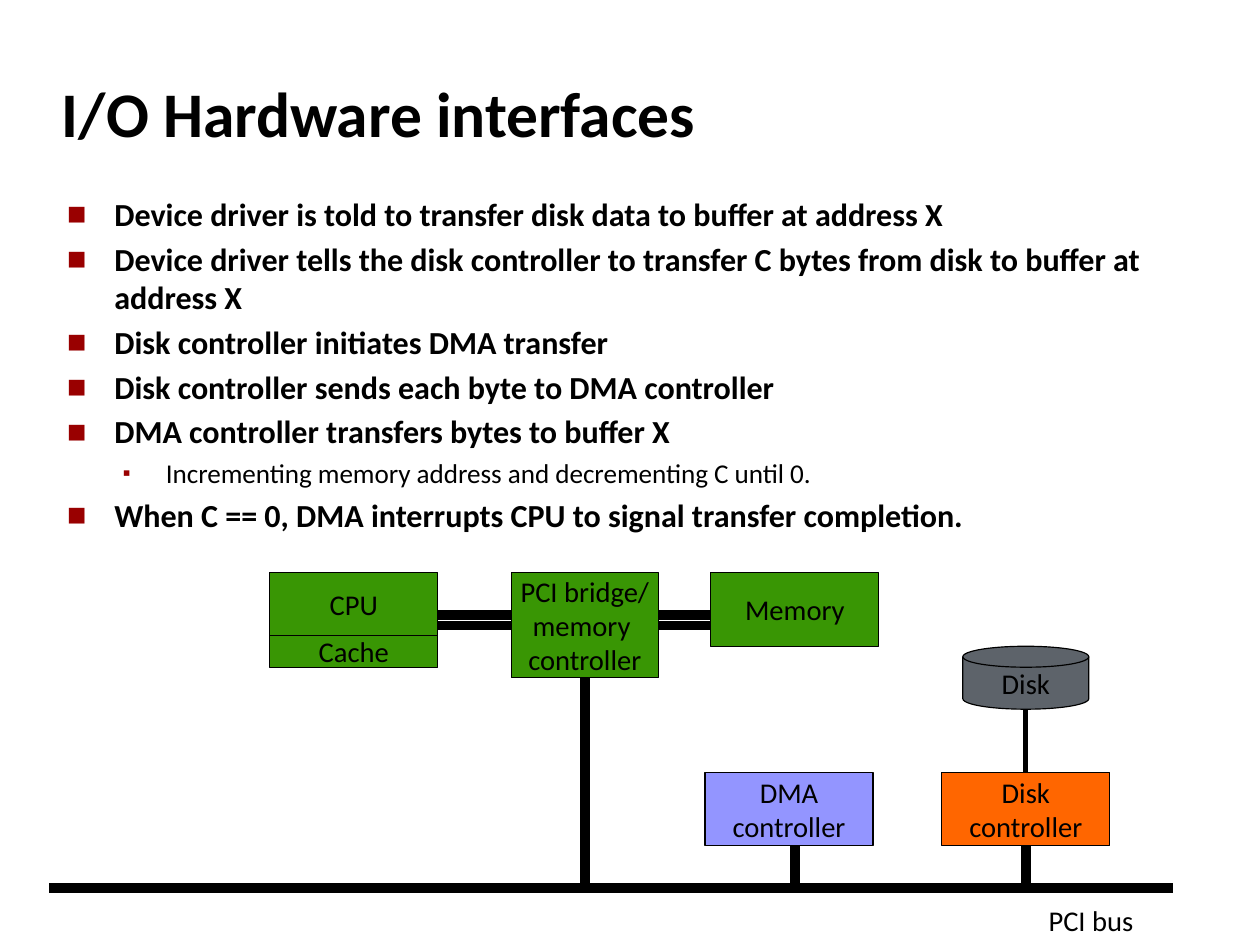
from dataclasses import dataclass

from lxml import etree
from pptx import Presentation
from pptx.dml.color import RGBColor
from pptx.enum.shapes import MSO_CONNECTOR, MSO_SHAPE
from pptx.enum.text import MSO_ANCHOR, PP_ALIGN
from pptx.oxml.ns import qn
from pptx.util import Inches, Mm, Pt

STRAIGHT = MSO_CONNECTOR.STRAIGHT
RECTANGLE, DISK = MSO_SHAPE.RECTANGLE, MSO_SHAPE.FLOWCHART_MAGNETIC_DISK
LEFT, CENTER = PP_ALIGN.LEFT, PP_ALIGN.CENTER
TOP, MIDDLE = MSO_ANCHOR.TOP, MSO_ANCHOR.MIDDLE
TOP_SIDE, BOTTOM_SIDE = 0, 2


@dataclass(frozen=True)
class Theme:
    """Colours, type and line sizes of the slide."""
    font: str = "Calibri"
    ink: str = "000000"
    bullet: str = "990000"
    core: str = "399604"
    dma: str = "3B3EFF"
    controller: str = "FF6600"
    disk: str = "5D636A"
    title_size: float = 40
    point_size: float = 20.2
    detail_size: float = 17.1
    label_size: float = 18
    outline: float = 0.75
    cable: float = 3
    bus: float = 6


class SlideBuilder:
    """Places styled elements on a 120 by 90 grid."""

    columns, rows = 120, 90

    def __init__(self, deck, theme):
        """Add a title-only slide to the deck."""
        self.theme = theme
        self.slide = deck.slides.add_slide(deck.slide_layouts[5])
        self.column = deck.slide_width / self.columns
        self.row = deck.slide_height / self.rows
        self.origin = (0, 0)

    def place(self, x, y):
        """Turn a grid point, counted from the origin, into lengths."""
        return (round((self.origin[0] + x) * self.column),
                round((self.origin[1] + y) * self.row))

    def area(self, x, y, width, height):
        """Turn a grid area into left, top, width and height."""
        return (*self.place(x, y), round(width * self.column), round(height * self.row))

    def style(self, para, size, bold=False, align=LEFT):
        """Format a paragraph and its runs."""
        para.alignment = align
        for span in para.runs:
            span.font.name = self.theme.font
            span.font.size = Pt(size)
            span.font.bold = bold
            span.font.color.rgb = RGBColor.from_string(self.theme.ink)

    def frame(self, box, anchor):
        """Set the anchor and insets of a wrapping text frame."""
        frame = box.text_frame
        frame.word_wrap = True
        frame.vertical_anchor = anchor
        frame.margin_left = frame.margin_right = Inches(0.11)
        frame.margin_top = frame.margin_bottom = Inches(0.06)
        return frame

    def title(self, text, *area):
        """Fill and move the title placeholder."""
        box = self.slide.shapes.title
        box.left, box.top, box.width, box.height = self.area(*area)
        frame = self.frame(box, MIDDLE)
        frame.text = text
        self.style(frame.paragraphs[0], self.theme.title_size, bold=True)

    def bullets(self, items, *area):
        """Add a bulleted list of (level, text) items."""
        frame = self.frame(self.slide.shapes.add_textbox(*self.area(*area)), TOP)
        frame.text = "\n".join(text for _, text in items)
        levels = ((self.theme.point_size, True, "■", 64, 4.5, 4.5),
                  (self.theme.detail_size, False, "▪", 80, 9.4, 4.1))
        for para, (level, _) in zip(frame.paragraphs, items):
            size, bold, mark, share, indent, hang = levels[level]
            para.level = level
            para.space_before = Pt(3.9)
            self.style(para, size, bold)
            props = para._p.get_or_add_pPr()
            props.set("marL", str(round(indent * self.column)))
            props.set("indent", str(round(-hang * self.column)))
            color = etree.SubElement(props, qn("a:buClr"))
            etree.SubElement(color, qn("a:srgbClr"), val=self.theme.bullet)
            etree.SubElement(props, qn("a:buSzPct"), val=str(share * 1000))
            etree.SubElement(props, qn("a:buFont"), typeface=self.theme.font)
            etree.SubElement(props, qn("a:buChar"), char=mark)

    def label(self, box, text):
        """Write centred text that does not wrap."""
        frame = box.text_frame
        frame.text = text
        frame.word_wrap = False
        frame.vertical_anchor = MIDDLE
        for para in frame.paragraphs:
            self.style(para, self.theme.label_size, align=CENTER)

    def caption(self, text, *area):
        """Add a free-standing label."""
        self.label(self.slide.shapes.add_textbox(*self.area(*area)), text)

    def unit(self, text, fill, *area, kind=RECTANGLE, alpha=None):
        """Add a labelled hardware unit."""
        box = self.slide.shapes.add_shape(kind, *self.area(*area))
        box.shadow.inherit = False
        box.fill.solid()
        box.fill.fore_color.rgb = RGBColor.from_string(fill)
        box.line.color.rgb = RGBColor.from_string(self.theme.ink)
        box.line.width = Pt(self.theme.outline)
        if alpha:
            color = box._element.spPr.find(qn("a:solidFill"))[0]
            etree.SubElement(color, qn("a:alpha"), val=str(alpha * 1000))
        self.label(box, text)
        return box

    def wire(self, start, end, width, source=None, target=None):
        """Draw a line, joined to (box, side) pairs where given."""
        line = self.slide.shapes.add_connector(
            STRAIGHT, *self.place(*start), *self.place(*end))
        line.line.color.rgb = RGBColor.from_string(self.theme.ink)
        line.line.width = Pt(width)
        etree.SubElement(line._element.spPr, qn("a:effectLst"))
        if source:
            line.begin_connect(*source)
        if target:
            line.end_connect(*target)


def main():
    """Build and save the deck."""
    deck = Presentation()
    deck.slide_width = Mm(280)
    deck.slide_height = Mm(210)
    theme = Theme()
    page = SlideBuilder(deck, theme)

    page.title("I/O Hardware interfaces", 4.7, 5.7, 99.6, 10)
    page.bullets([
        (0, "Device driver is told to transfer disk data to buffer at address X"),
        (0, "Device driver tells the disk controller to transfer C bytes "
            "from disk to buffer at address X"),
        (0, "Disk controller initiates DMA transfer"),
        (0, "Disk controller sends each byte to DMA controller"),
        (0, "DMA controller transfers bytes to buffer X"),
        (1, "Incrementing memory address and decrementing C until 0."),
        (0, "When C == 0, DMA interrupts CPU to signal transfer completion."),
    ], 5.2, 17.85, 112, 34.7)

    page.origin = (25.7, 54.55)
    for rail in (4, 5):
        page.wire((16, rail), (42, rail), theme.bus)
    page.unit("CPU", theme.core, 0, 0, 16, 6)
    page.unit("Cache", theme.core, 0, 6, 16, 3)
    bridge = page.unit("PCI bridge/\vmemory \vcontroller", theme.core, 23, 0, 14, 10)
    page.unit("Memory", theme.core, 42, 0, 16, 7)
    controller = page.unit("Disk\vcontroller", theme.controller, 64, 19, 16, 7)
    page.unit("Disk", theme.disk, 66, 7, 12, 6, kind=DISK)
    page.unit("DMA\vcontroller", theme.dma, 41.45, 19, 16, 7, alpha=55)

    bus = 30
    page.wire((-21, bus), (86, bus), theme.bus)
    page.wire((30, 10), (30, bus), theme.bus, source=(bridge, BOTTOM_SIDE))
    page.wire((72, 26), (72, bus), theme.bus, source=(controller, BOTTOM_SIDE))
    page.wire((50, 26), (50, bus), theme.bus)
    page.wire((72, 13), (72, 19), theme.cable, target=(controller, TOP_SIDE))
    page.caption("PCI bus", 73, 30.9, 10.4, 4.4)

    deck.save("out.pptx")


if __name__ == "__main__":
    main()
